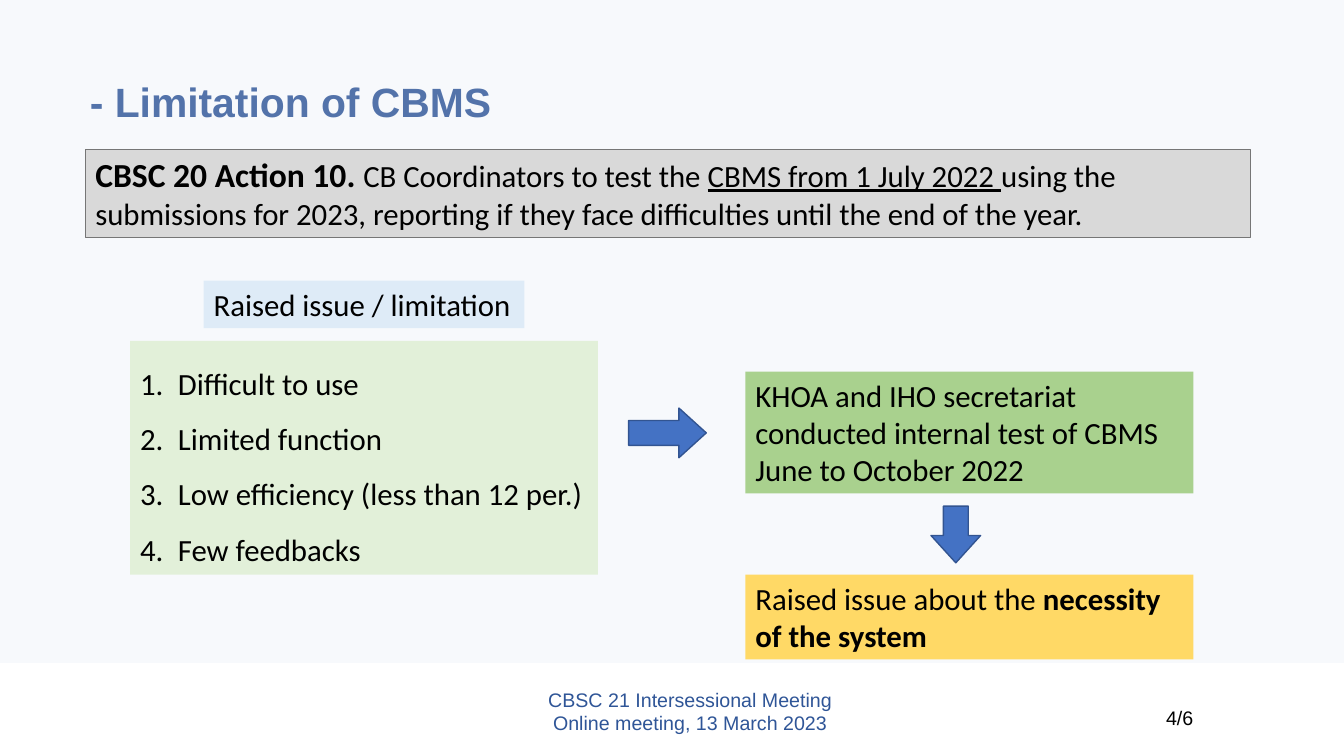
from collections import namedtuple
from dataclasses import dataclass

from lxml import etree
from pptx import Presentation
from pptx import util as u
from pptx.dml import color
from pptx.enum import shapes, text
from pptx.oxml import ns

Box = namedtuple("Box", "left top width height")


@dataclass(frozen=True)
class Theme:
    navy: str = "2F5597"
    ink: str = "000000"
    band: str = "DAE3F3"
    grey: str = "D9D9D9"
    grey_edge: str = "767676"
    pale_blue: str = "DEEBF7"
    pale_green: str = "E2F0D9"
    green: str = "A9D18E"
    gold: str = "FFD966"
    arrow: str = "4472C4"
    arrow_edge: str = "325491"
    heading_font: str = "Arial"
    body_font: str = "Calibri"
    title_size: float = 29.2
    lead_size: float = 24
    body_size: float = 22
    footer_size: float = 14


THEME = Theme()
ISSUES = ["Difficult to use", "Limited function",
          "Low efficiency (less than 12 per.)", "Few feedbacks"]


def set_all(target, values):
    for name, value in values.items():
        setattr(target, name, value)


def rgb(value):
    return color.RGBColor.from_string(value)


def inside(box, left, top, width, height):
    """Return a box whose offset is measured from the corner of another."""
    return Box(box.left + left, box.top + top, width, height)


def points(box):
    return [u.Pt(value) for value in box]


def add_figure(page, box, fill, edge=None, edge_width=1, kind=shapes.MSO_SHAPE.RECTANGLE):
    figure = page.shapes.add_shape(kind, *points(box))
    figure.shadow.inherit = False
    figure.fill.solid()
    figure.fill.fore_color.rgb = rgb(fill)
    if edge:
        figure.line.color.rgb = rgb(edge)
        figure.line.width = u.Pt(edge_width)
    else:
        figure.line.fill.background()
    return figure


def add_arrow(page, box, kind):
    arrow = add_figure(page, box, THEME.arrow, THEME.arrow_edge, kind=kind)
    arrow.adjustments[0] = 0.5
    arrow.adjustments[1] = 0.55


def write(shape, paragraphs, look=None, align=text.PP_ALIGN.LEFT,
          anchor=text.MSO_ANCHOR.TOP, spacing=1.0, numbered=False):
    """Fill a shape; each paragraph is a list of (wording, font changes)."""
    base = {"name": THEME.body_font, "size": THEME.body_size, "color": THEME.ink}
    frame = shape.text_frame
    set_all(frame, {"word_wrap": True, "auto_size": text.MSO_AUTO_SIZE.NONE,
                    "vertical_anchor": anchor})
    for index, spans in enumerate(paragraphs):
        para = frame.add_paragraph() if index else frame.paragraphs[0]
        set_all(para, {"alignment": align, "line_spacing": spacing})
        if numbered:
            number_paragraph(para)
        for part_index, (wording, changes) in enumerate(spans):
            font_values = {**base, **(look or {}), **changes}
            hue = font_values.pop("color")
            font_values["size"] = u.Pt(font_values["size"])
            for line_index, line in enumerate(wording.split("\n")):
                if line_index:
                    para.add_line_break()
                span = para.add_run()
                span.text = line
                set_all(span.font, font_values)
                span.font.color.rgb = rgb(hue)


def number_paragraph(para):
    properties = para._p.get_or_add_pPr()
    properties.set("marL", str(u.Pt(27)))
    properties.set("indent", str(u.Pt(-27)))
    etree.SubElement(properties, ns.qn("a:buAutoNum"), type="arabicPeriod")


def add_backdrop(page, box):
    band = add_figure(page, box, THEME.band)
    tint = band.fill._xPr.find(".//" + ns.qn("a:srgbClr"))
    etree.SubElement(tint, ns.qn("a:alpha"), val="21000")


def add_footer(page, box):
    look = {"name": THEME.heading_font, "size": THEME.footer_size}
    meeting = page.shapes.add_textbox(*points(inside(box, 331, 13.5, 324, 41)))
    write(meeting, [[("CBSC 21 Intersessional Meeting\nOnline meeting, 13 March 2023", {})]],
          {**look, "color": THEME.navy}, text.PP_ALIGN.CENTER, text.MSO_ANCHOR.MIDDLE)
    number = page.shapes.add_textbox(*points(inside(box, 745, 26.5, 114.5, 29)))
    write(number, [[("4/6", {})]], look, text.PP_ALIGN.RIGHT)


def add_heading(page, box):
    title = page.shapes.title
    place = inside(box, 0, 0, 356.5, 52.5)
    set_all(title, dict(zip(place._fields, points(place))))
    look = {"name": THEME.heading_font, "size": THEME.title_size,
            "color": THEME.navy, "bold": True}
    write(title, [[("- Limitation of CBMS", {})]], look,
          anchor=text.MSO_ANCHOR.MIDDLE, spacing=0.9)
    action = add_figure(page, inside(box, 4, 58.5, 832, 63),
                        THEME.grey, THEME.grey_edge, 0.75)
    write(action, [[
        ("CBSC 20 Action 10. ", {"size": THEME.lead_size, "bold": True}),
        ("CB Coordinators to test the ", {}),
        ("CBMS from 1 July 2022 ", {"underline": True}),
        ("using the submissions for 2023, reporting if they face difficulties "
         "until the end of the year.", {}),
    ]])


def add_issues(page, box):
    label = add_figure(page, inside(box, 52.5, 0, 229, 34), THEME.pale_blue)
    write(label, [[("Raised issue / limitation", {})]])
    issues = add_figure(page, inside(box, 0, 43, box.width, box.height - 43),
                        THEME.pale_green)
    write(issues, [[(issue, {})] for issue in ISSUES], spacing=1.5, numbered=True)


def add_response(page, box):
    test = add_figure(page, inside(box, 0, 0, box.width, 87), THEME.green)
    write(test, [[("KHOA and IHO secretariat conducted internal test of CBMS "
                   "June to October 2022", {})]])
    add_arrow(page, inside(box, 132.5, 96, 35.5, 40.5), shapes.MSO_SHAPE.DOWN_ARROW)
    need = add_figure(page, inside(box, 0, box.height - 60.5, box.width, 60.5),
                      THEME.gold)
    write(need, [[("Raised issue about the ", {}),
                  ("necessity of the system", {"bold": True})]])


def main():
    deck = Presentation()
    set_all(deck, {"slide_width": u.Pt(960), "slide_height": u.Pt(540)})
    page = deck.slides.add_slide(deck.slide_layouts[5])
    add_backdrop(page, Box(0, 0, 960, 473.5))
    add_footer(page, Box(0, 474, 960, 66))
    add_heading(page, Box(57, 48, 836, 122))
    add_issues(page, Box(93, 200.5, 334, 210))
    add_arrow(page, Box(449, 291.5, 55.5, 35.5), shapes.MSO_SHAPE.RIGHT_ARROW)
    add_response(page, Box(532.5, 265.5, 320, 205.5))
    deck.save("out.pptx")


if __name__ == "__main__":
    main()
